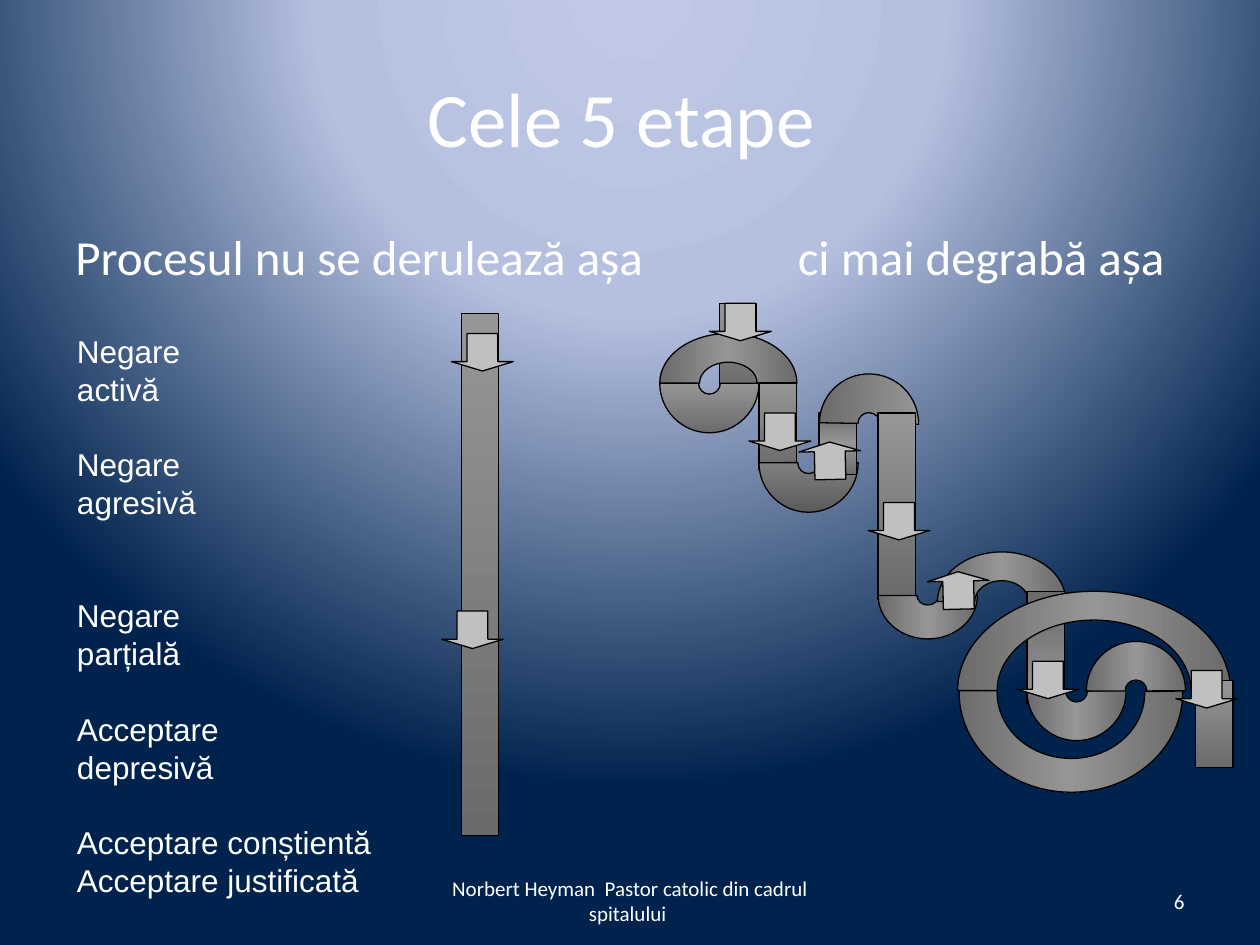
"""Build the slide that contrasts a straight and a winding path through five stages."""
import math

import pptx
import pptx.util
import pptx.dml.color
import pptx.enum.shapes
import pptx.enum.text
import pptx.oxml
import pptx.oxml.ns
import lxml.etree

Pt = pptx.util.Pt
ALIGN = pptx.enum.text.PP_ALIGN
ANCHOR = pptx.enum.text.MSO_ANCHOR
PRESET = pptx.enum.shapes.MSO_SHAPE
NAMESPACE = pptx.oxml.ns.nsdecls("a")

COLORS = {
    "text": "FFFFFF", "outline": "000000", "arrow": "C0C0C0",
    "light": "969696", "mid": "808080",
    "sky": "BFC9E5", "haze": "B5C0E0", "navy": "00234D",
}
SHADED = {"dark": "light", "deep": "mid"}
SHADE = 46275

TITLE = "Cele 5 etape "
HEADING = "Procesul nu se derulează așa\tci mai degrabă așa"
FOOTER = "Norbert Heyman  Pastor catolic din cadrul spitalului "
PAGE_NUMBER = "6"
STAGES = [
    (0, ["Negare", "activă"]),
    (1, ["Negare", "agresivă"]),
    (2, ["Negare", "parțială"]),
    (1, ["Acceptare", "depresivă"]),
    (1, ["Acceptare conștientă", "Acceptare justificată"]),
]
LINE_PITCH = 21.6

FALL = ["light", "dark"]
RISE = ["dark", "light"]
SHEEN = ["dark", "light", "dark"]
DULL = ["deep", "mid", "deep"]
BAR_WIDTH = 21.4
ARROW_WIDTH, ARROW_HEIGHT = 35.3, 21.4

STRAIGHT_BAR = ("bar", 263.6, 179.2, 298.1, FALL)
STRAIGHT_ARROWS = [(258, 190.6, 0), (252.3, 349.2, 0)]
WINDING_PARTS = [
    ("bar", 411.1, 173.3, 49.7, FALL),
    ("arc", 377, 190.6, 56.7, 56.7, 180, 0.22, SHEEN, 90),
    ("arc", 377, 190.6, 78.4, 56.7, 0, 0.42, SHEEN, 0),
    ("bar", 433.7, 218.9, 49.7, FALL),
    ("arc", 433.7, 236, 56.7, 56.7, 180, 0.22, DULL, 90),
    ("bar", 468, 236, 35.3, SHEEN),
    ("arc", 468.2, 213.7, 56.7, 56.7, 0.9, 0.22, RISE, 0),
    ("bar", 501.8, 236, 106.6, FALL),
    ("arc", 501.8, 315.4, 56.7, 49.7, 180, 0.22, SHEEN, 0),
    ("arc", 535.7, 315.4, 73.4, 56.7, 0, 0.42, SHEEN, 0),
    ("bar", 586.8, 337.9, 64.1, RISE),
    ("arc", 586.8, 366.5, 56.7, 56.7, 180, 0.22, SHEEN, 0),
    ("arc", 620.8, 366.5, 56.7, 56.7, 359.8, 0.22, SHEEN, 0),
    ("arc", 548.1, 339.1, 127.7, 113.6, 181, 0.66, SHEEN, 0, 2.2),
    ("arc", 547.2, 337.9, 156, 113.6, 0, 0.71, SHEEN, 0),
    ("bar", 683.2, 388.8, 49.7, FALL),
]
WINDING_ARROWS = [
    (405.4, 173.3, 0), (456.6, 252.6, 178.7), (496.1, 287.1, 0), (530, 326.7, 178.7),
    (581.2, 377.8, 0), (671.9, 383.2, 0), (428, 236, 0),
]


def color(name):
    return pptx.dml.color.RGBColor.from_string(COLORS[name])


def stop_xml(position, name):
    shade = f'<a:shade val="{SHADE}"/>' if name in SHADED else ""
    value = COLORS[SHADED.get(name, name)]
    return f'<a:gs pos="{position * 1000}"><a:srgbClr val="{value}">{shade}</a:srgbClr></a:gs>'


def set_gradient(fill, owner, stops, direction):
    fill.gradient()
    gradient = owner.find(".//" + pptx.oxml.ns.qn("a:gradFill"))
    listing = "".join(stop_xml(*stop) for stop in stops)
    source = f"<a:gradFill {NAMESPACE}><a:gsLst>{listing}</a:gsLst>{direction}</a:gradFill>"
    gradient[:] = list(pptx.oxml.parse_xml(source))


def finish(shape, names=None, angle=90, rotation=0):
    shape.shadow.inherit = False
    shape.rotation = rotation
    shape.line.color.rgb = color("outline")
    shape.line.width = Pt(0.75)
    if names:
        step = 100 // (len(names) - 1)
        stops = [(index * step, name) for index, name in enumerate(names)]
        set_gradient(shape.fill, shape._element, stops, f'<a:lin ang="{angle * 60000}" scaled="0"/>')
    else:
        shape.fill.solid()
        shape.fill.fore_color.rgb = color("arrow")


def add_bar(page, left, top, height, names):
    bar = page.shapes.add_shape(PRESET.RECTANGLE, Pt(left), Pt(top), Pt(BAR_WIDTH), Pt(height))
    finish(bar, names)


def add_arrow(page, left, top, rotation):
    arrow = page.shapes.add_shape(PRESET.DOWN_ARROW, Pt(left), Pt(top), Pt(ARROW_WIDTH), Pt(ARROW_HEIGHT))
    arrow.adjustments[0], arrow.adjustments[1] = 0.5, 0.25
    finish(arrow, rotation=rotation)


def add_arc(page, left, top, width, height, rotation, inner, names, angle, extra=0):
    """Draw the upper half of a ring, lengthened by extra degrees, in the box of the whole ring."""
    def point(x, y):
        return f'<a:pt x="{Pt(width / 2 * (1 + x))}" y="{Pt(height / 2 * (1 + y))}"/>'

    def curves(scale, turns):
        result = ""
        for start, end in zip(turns, turns[1:]):
            first, last = math.radians(start), math.radians(end)
            reach = 4 / 3 * math.tan((last - first) / 4)
            controls = [
                (math.cos(first) - reach * math.sin(first), math.sin(first) + reach * math.cos(first)),
                (math.cos(last) + reach * math.sin(last), math.sin(last) - reach * math.cos(last)),
                (math.cos(last), math.sin(last)),
            ]
            places = "".join(point(scale * x, scale * y) for x, y in controls)
            result += f"<a:cubicBezTo>{places}</a:cubicBezTo>"
        return result

    def edge(scale, turn):
        return point(scale * math.cos(math.radians(turn)), scale * math.sin(math.radians(turn)))

    turns = [180, 270, 360]
    if extra:
        turns = [180 - extra, *turns, 360 + extra]
    builder = page.shapes.build_freeform(Pt(left), Pt(top))
    builder.add_line_segments([(Pt(left + width), Pt(top)), (Pt(left + width), Pt(top + height))])
    arc = builder.convert_to_shape()
    outline = arc._element.find(".//" + pptx.oxml.ns.qn("a:path"))
    source = (
        f"<a:path {NAMESPACE}><a:moveTo>{edge(inner, turns[0])}</a:moveTo>{curves(inner, turns)}"
        f"<a:lnTo>{edge(1, turns[-1])}</a:lnTo>{curves(1, turns[::-1])}<a:close/></a:path>"
    )
    outline[:] = list(pptx.oxml.parse_xml(source))
    finish(arc, names, angle, rotation)


def write(box, lines, size, font="Calibri", align=ALIGN.LEFT, anchor=ANCHOR.MIDDLE, pitch=None):
    frame = box.text_frame
    frame.word_wrap = True
    frame.vertical_anchor = anchor
    for index, (gap, text) in enumerate(lines):
        para = frame.add_paragraph() if index else frame.paragraphs[0]
        para.alignment = align
        para.space_before = Pt(gap)
        if pitch:
            para.line_spacing = Pt(pitch)
        span = para.add_run()
        span.text = text
        span.font.size = Pt(size)
        span.font.name = font
        span.font.color.rgb = color("text")
    return frame


def add_text(page, area, lines, size, **style):
    return write(page.shapes.add_textbox(*map(Pt, area)), lines, size, **style)


def main():
    deck = pptx.Presentation()
    deck.slide_width, deck.slide_height = Pt(720), Pt(540)
    page = deck.slides.add_slide(deck.slide_layouts[5])
    set_gradient(
        page.background.fill, page._element, [(0, "sky"), (40, "haze"), (100, "navy")],
        '<a:path path="circle"><a:fillToRect l="50000" t="-80000" r="50000" b="180000"/></a:path>',
    )
    title = page.shapes.title
    title.left, title.top, title.width, title.height = map(Pt, (36, 21.6, 648, 90))
    write(title, [(0, TITLE)], 44, align=ALIGN.CENTER)

    heading = add_text(page, (36, 126, 648, 356.4), [(5.6, HEADING)], 28, anchor=ANCHOR.TOP)
    properties = heading.paragraphs[0]._p.get_or_add_pPr()
    tabs = lxml.etree.SubElement(properties, pptx.oxml.ns.qn("a:tabLst"))
    lxml.etree.SubElement(tabs, pptx.oxml.ns.qn("a:tab"), pos=str(Pt(412.8)), algn="l")
    add_text(page, (246, 500.4, 228, 28.8), [(0, FOOTER)], 12, align=ALIGN.CENTER)
    add_text(page, (516, 500.4, 168, 28.8), [(0, PAGE_NUMBER)], 12, align=ALIGN.RIGHT)

    builders = {"bar": add_bar, "arc": add_arc}
    for parts, arrows in (([STRAIGHT_BAR], STRAIGHT_ARROWS), (WINDING_PARTS, WINDING_ARROWS)):
        for kind, *values in parts:
            builders[kind](page, *values)
        for arrow in arrows:
            add_arrow(page, *arrow)

    lines = [(0 if index else gap * LINE_PITCH, text)
             for gap, texts in STAGES for index, text in enumerate(texts)]
    stages = add_text(page, (36.9, 141, 193, 378), lines, 18, font="Arial",
                      anchor=ANCHOR.BOTTOM, pitch=LINE_PITCH)
    stages.margin_bottom = Pt(5.4)
    deck.save("out.pptx")


if __name__ == "__main__":
    main()
